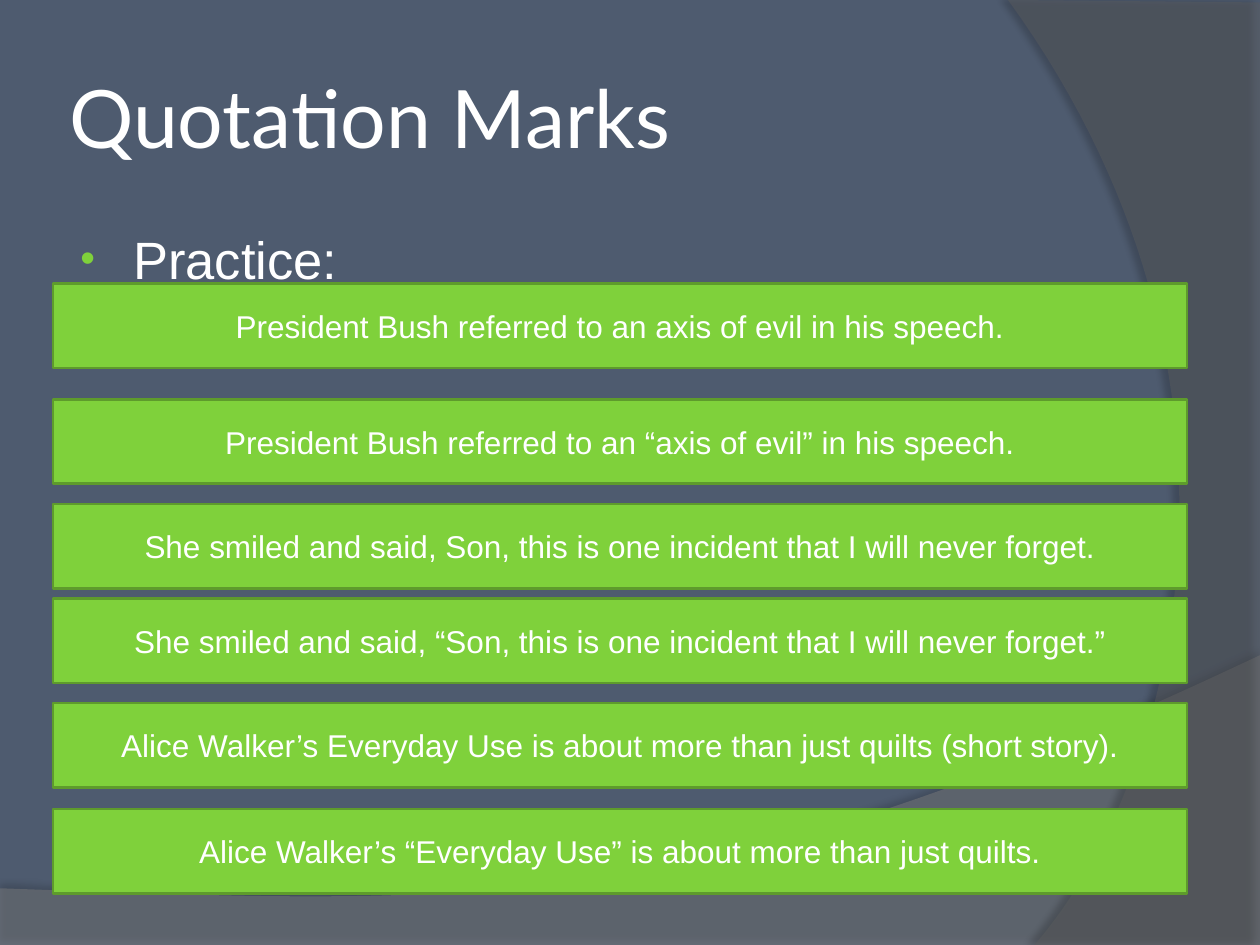
from dataclasses import dataclass

from lxml import etree
from pptx import Presentation
from pptx.dml.color import RGBColor
from pptx.enum.shapes import MSO_SHAPE
from pptx.enum.text import MSO_ANCHOR, PP_ALIGN
from pptx.oxml.ns import qn
from pptx.util import Emu, Pt

RECTANGLE = MSO_SHAPE.RECTANGLE
MIDDLE, TOP = MSO_ANCHOR.MIDDLE, MSO_ANCHOR.TOP
CENTER, LEFT = PP_ALIGN.CENTER, PP_ALIGN.LEFT

PX = 9144  # 100 px to the inch
CURVE_STEPS = 60
WHITE, GREEN, DARK_GREEN = "FFFFFF", "7FD13B", "5E9B2C"
Point = tuple[int, int]


@dataclass
class Swoosh:
    before: list[Point]    # corners up to the start of the curve
    controls: list[Point]  # two handles and the end of the curve
    after: list[Point]
    color: str
    opacity: int
    shadow_opacity: int
    shadow_distance: float
    shadow_angle: int


@dataclass
class Sentence:
    top: int
    text: str


SWOOSHES = [
    Swoosh([(0, 705), (0, 751), (1000, 751), (1000, 520)],
           [(559, 729), (391, 719), (0, 705)], [],
           "7F7F7F", 45, 35, 3.5, 270),
    Swoosh([(1000, 2), (1000, 750), (821, 750)],
           [(935, 619), (1018, 300), (800, 0)], [(1000, 2)],
           "5E5E5E", 40, 45, 4, 180),
]

SENTENCES = [
    Sentence(225, "President Bush referred to an axis of evil in his speech."),
    Sentence(317, "President Bush referred to an “axis of evil” in his speech."),
    Sentence(400, "She smiled and said, Son, this is one incident that I will never forget."),
    Sentence(475, "She smiled and said, “Son, this is one incident that I will never forget.”"),
    Sentence(558, "Alice Walker’s Everyday Use is about more than just quilts (short story)."),
    Sentence(642, "Alice Walker’s “Everyday Use” is about more than just quilts."),
]


def px(length: int) -> Emu:
    return Emu(length * PX)


def rgb(color: str) -> RGBColor:
    return RGBColor.from_string(color)


def curve(start: Point, controls: list[Point]) -> list[Point]:
    """Points along a cubic curve, in EMU."""
    points = []
    for step in range(1, CURVE_STEPS + 1):
        t = step / CURVE_STEPS
        weights = ((1 - t) ** 3, 3 * t * (1 - t) ** 2, 3 * t * t * (1 - t), t ** 3)
        ends = list(zip(weights, [start, *controls]))
        points.append(tuple(round(PX * sum(w * p[axis] for w, p in ends))
                            for axis in (0, 1)))
    return points


def add_alpha(color_element, percent: int) -> None:
    etree.SubElement(color_element, qn("a:alpha"), val=str(percent * 1000))


def add_swoosh(slide, swoosh: Swoosh) -> None:
    corners = [(x * PX, y * PX) for x, y in swoosh.before]
    bend = curve(swoosh.before[-1], swoosh.controls)
    tail = [(x * PX, y * PX) for x, y in swoosh.after]
    builder = slide.shapes.build_freeform(*corners[0])
    builder.add_line_segments(corners[1:] + bend + tail, close=True)
    shape = builder.convert_to_shape()
    shape.fill.solid()
    shape.fill.fore_color.rgb = rgb(swoosh.color)
    shape.line.fill.background()

    properties = shape.element.spPr
    add_alpha(properties.find(".//" + qn("a:solidFill") + "/" + qn("a:srgbClr")),
              swoosh.opacity)
    effects = etree.SubElement(properties, qn("a:effectLst"))
    shadow = etree.SubElement(
        effects, qn("a:outerShdw"), blurRad=str(Pt(4)),
        dist=str(Pt(swoosh.shadow_distance)),
        dir=str(swoosh.shadow_angle * 60000), algn="ctr", rotWithShape="0")
    add_alpha(etree.SubElement(shadow, qn("a:srgbClr"), val="000000"),
              swoosh.shadow_opacity)


def write(shape, text: str, size: int, font: str, anchor, align):
    frame = shape.text_frame
    frame.word_wrap = True
    frame.vertical_anchor = anchor
    para = frame.paragraphs[0]
    para.alignment = align
    span = para.add_run()
    span.text = text
    span.font.size = Pt(size)
    span.font.name = font
    span.font.color.rgb = rgb(WHITE)
    return para


def add_title(slide, text: str) -> None:
    box = slide.shapes.add_textbox(px(50), px(30), px(817), px(125))
    write(box, text, 46, "Lato", MIDDLE, LEFT)
    frame = box.text_frame
    frame.margin_left = frame.margin_right = px(5)


def add_bullet(slide, text: str) -> None:
    box = slide.shapes.add_textbox(px(50), px(175), px(817), px(495))
    para = write(box, text, 30, "Arial", TOP, LEFT)
    properties = para._p.get_or_add_pPr()
    properties.set("marL", str(px(46)))
    properties.set("indent", str(px(-42)))
    spacing = etree.SubElement(properties, qn("a:spcBef"))
    etree.SubElement(spacing, qn("a:spcPct"), val="20000")
    color = etree.SubElement(properties, qn("a:buClr"))
    etree.SubElement(color, qn("a:srgbClr"), val=GREEN)
    etree.SubElement(properties, qn("a:buSzPct"), val="80000")
    etree.SubElement(properties, qn("a:buFont"), typeface="Arial")
    etree.SubElement(properties, qn("a:buChar"), char="•")


def add_sentence(slide, sentence: Sentence) -> None:
    bar = slide.shapes.add_shape(RECTANGLE, px(42), px(sentence.top), px(900), px(67))
    bar.shadow.inherit = False
    bar.fill.solid()
    bar.fill.fore_color.rgb = rgb(GREEN)
    bar.line.color.rgb = rgb(DARK_GREEN)
    bar.line.width = Pt(1.5)
    write(bar, sentence.text, 18, "Arial", MIDDLE, CENTER)


def main() -> None:
    deck = Presentation()
    deck.slide_width, deck.slide_height = px(1000), px(750)
    page = deck.slides.add_slide(deck.slide_layouts[6])

    # Background
    page.background.fill.solid()
    page.background.fill.fore_color.rgb = rgb("4E5B6F")
    for swoosh in SWOOSHES:
        add_swoosh(page, swoosh)

    # Heading and practice sentences
    add_title(page, "Quotation Marks")
    add_bullet(page, "Practice:")
    for sentence in SENTENCES:
        add_sentence(page, sentence)

    deck.save("out.pptx")


if __name__ == "__main__":
    main()
